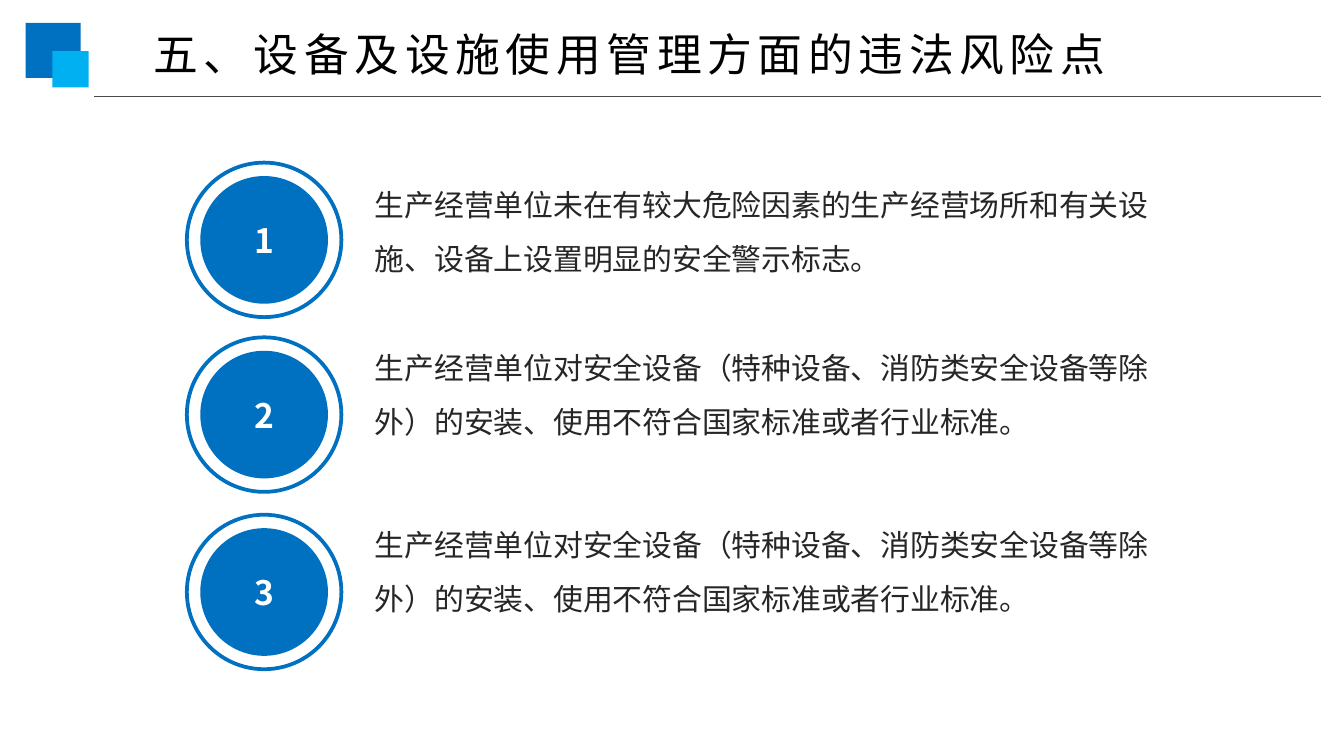
from dataclasses import dataclass

import pptx
import pptx.dml.color
import pptx.enum.shapes
import pptx.enum.text
import pptx.oxml
import pptx.oxml.ns
import pptx.util

RGBColor = pptx.dml.color.RGBColor
Shape = pptx.enum.shapes.MSO_SHAPE
Anchor = pptx.enum.text.MSO_ANCHOR
Align = pptx.enum.text.PP_ALIGN

BLUE = RGBColor(0x00, 0x70, 0xC0)
SKY = RGBColor(0x00, 0xB0, 0xF0)
RULE = RGBColor(0x4D, 0x49, 0x48)
BLACK = RGBColor(0x00, 0x00, 0x00)
DARK = RGBColor(0x26, 0x26, 0x26)
WHITE = RGBColor(0xFF, 0xFF, 0xFF)
FONT = "Noto Sans CJK SC"

SLIDE_WIDTH = pptx.util.Inches(10)
SLIDE_HEIGHT = SLIDE_WIDTH * 9 // 16
GRID_COLUMNS = 100

RING_LEFT = 13.9
RING_SIZE = 11.5
DISC_SIZE = 9.5
TEXT_LEFT = 26.9
TEXT_WIDTH = 60.9
TEXT_HEIGHT = 9.1


@dataclass
class Risk:
    text: str
    text_top: float
    ring_top: float


EQUIPMENT = "生产经营单位对安全设备（特种设备、消防类安全设备等除外）的安装、使用不符合国家标准或者行业标准。"
RISKS = [
    Risk("生产经营单位未在有较大危险因素的生产经营场所和有关设施、设备上设置明显的安全警示标志。", 12.1, 12.1),
    Risk(EQUIPMENT, 24.2, 25.1),
    Risk(EQUIPMENT, 37.4, 38.3),
]


def cells(*counts: float) -> list[int]:
    return [round(count * SLIDE_WIDTH / GRID_COLUMNS) for count in counts]


def format_text(para, size: float, color: RGBColor, bold: bool = False, spacing: int = 0) -> None:
    for span in para.runs:
        span.font.size = pptx.util.Pt(size)
        span.font.name = FONT
        span.font.bold = bold
        span.font.color.rgb = color
        properties = span.font._element
        if spacing:
            properties.set("spc", str(spacing))
        east_asian = pptx.oxml.parse_xml(
            f'<a:ea {pptx.oxml.ns.nsdecls("a")} typeface="{FONT}"/>')
        properties.find(pptx.oxml.ns.qn("a:latin")).addnext(east_asian)


def add_filled(page, kind, left: float, top: float, size: float, color: RGBColor):
    shape = page.shapes.add_shape(kind, *cells(left, top, size, size))
    shape.shadow.inherit = False
    shape.fill.solid()
    shape.fill.fore_color.rgb = color
    shape.line.fill.background()
    return shape


def add_header(page) -> None:
    add_filled(page, Shape.RECTANGLE, 1.9, 1.7, 4.1, BLUE)
    add_filled(page, Shape.RECTANGLE, 3.9, 3.8, 2.7, SKY)
    rule = page.shapes.add_connector(
        pptx.enum.shapes.MSO_CONNECTOR.STRAIGHT, *cells(98.3, 7.2, 7, 7.2))
    rule.line.color.rgb = RULE
    rule.line.width = pptx.util.Pt(0.75)
    rule._element.spPr.append(
        pptx.oxml.parse_xml(f'<a:effectLst {pptx.oxml.ns.nsdecls("a")}/>'))


def set_title(page, text: str) -> None:
    title = page.shapes.title
    title.left, title.top, title.width, title.height = cells(10.4, 1.5, 78.3, 5)
    frame = title.text_frame
    frame.text = text
    frame.auto_size = pptx.enum.text.MSO_AUTO_SIZE.NONE
    frame.vertical_anchor = Anchor.MIDDLE
    para = frame.paragraphs[0]
    para.alignment = Align.LEFT
    format_text(para, 24, BLACK, spacing=300)


def add_risk(page, number: int, risk: Risk) -> None:
    box = page.shapes.add_textbox(*cells(TEXT_LEFT, risk.text_top, TEXT_WIDTH, TEXT_HEIGHT))
    frame = box.text_frame
    frame.word_wrap = True
    frame.text = risk.text
    para = frame.paragraphs[0]
    para.line_spacing = 1.5
    format_text(para, 16, DARK)

    inset = (RING_SIZE - DISC_SIZE) / 2
    disc = add_filled(page, Shape.OVAL, RING_LEFT + inset, risk.ring_top + inset, DISC_SIZE, BLUE)
    disc.text_frame.text = str(number)
    disc.text_frame.vertical_anchor = Anchor.MIDDLE
    para = disc.text_frame.paragraphs[0]
    para.alignment = Align.CENTER
    format_text(para, 18, WHITE, bold=True)

    ring = page.shapes.add_shape(
        Shape.OVAL, *cells(RING_LEFT, risk.ring_top, RING_SIZE, RING_SIZE))
    ring.shadow.inherit = False
    ring.fill.background()
    ring.line.color.rgb = BLUE
    ring.line.width = pptx.util.Pt(2)


def main() -> None:
    deck = pptx.Presentation()
    deck.slide_width, deck.slide_height = SLIDE_WIDTH, SLIDE_HEIGHT
    page = deck.slides.add_slide(deck.slide_layouts[5])
    add_header(page)
    set_title(page, "五、设备及设施使用管理方面的违法风险点")
    for number, risk in enumerate(RISKS, 1):
        add_risk(page, number, risk)
    deck.save("out.pptx")


if __name__ == "__main__":
    main()
